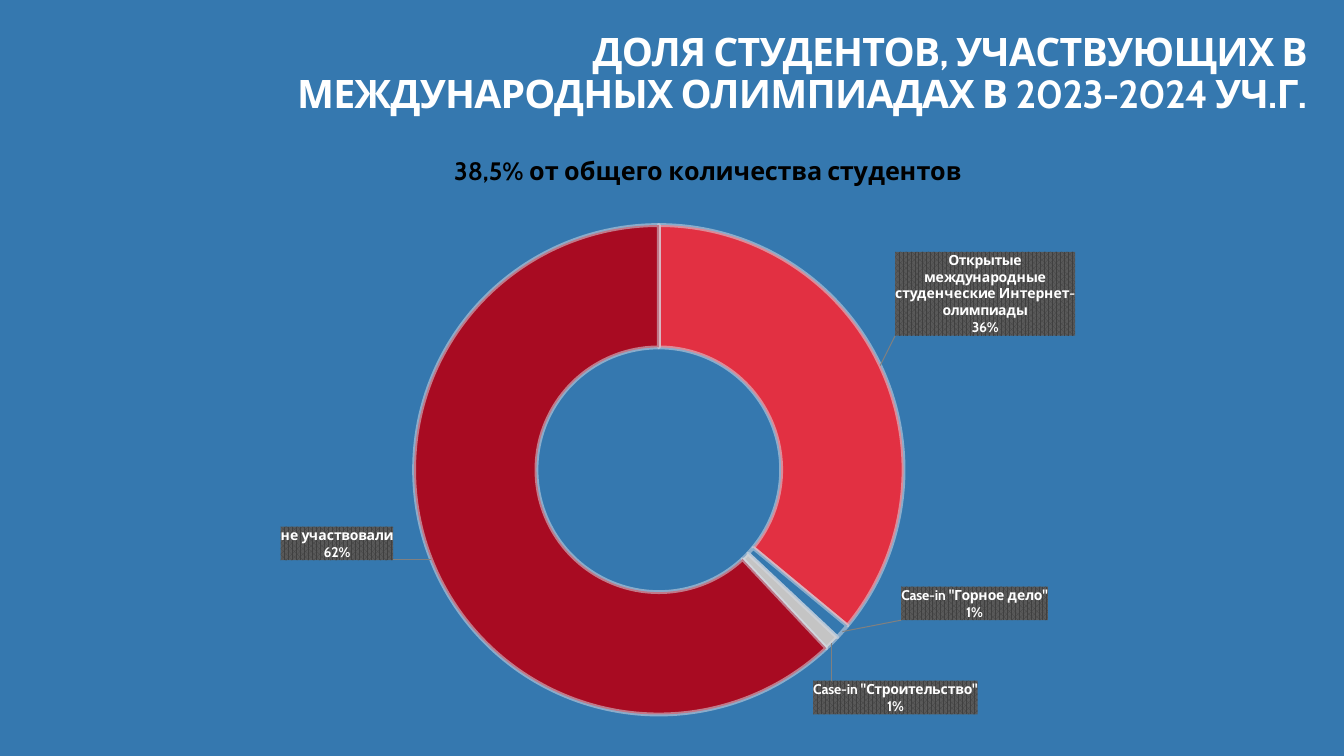
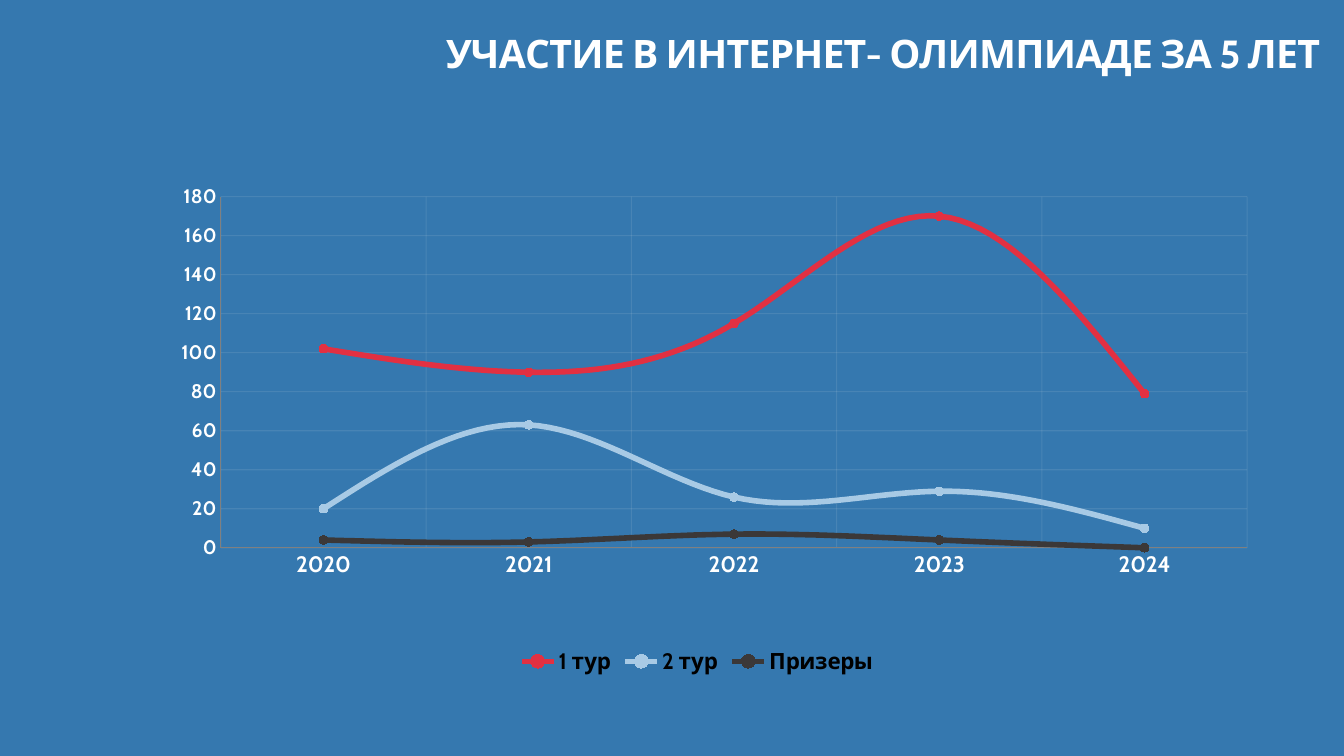
from dataclasses import dataclass

from pptx import Presentation
from pptx import util as u
from pptx.chart.data import CategoryChartData
from pptx.dml.color import RGBColor
from pptx.enum import chart as ch
from pptx.enum import text
from pptx.oxml import parse_xml
from pptx.oxml.ns import nsdecls, qn

EMU_PER_PX = 914400 / 100.8
FONT = "Cabin"
COLORS = {
    "background": "3578AF",
    "white": "FFFFFF",
    "black": "000000",
    "red": "E23042",
    "dark_red": "A80B22",
    "silver": "C4C4C4",
    "ring_edge": "D6DCE5",
    "light_blue": "A8CAE5",
    "charcoal": "3B3838",
    "axis": "808080",
    "grid": "F2F2F2",
    "label_front": "404040",
    "label_back": "595959",
}


@dataclass(frozen=True)
class Box:
    left: int
    top: int
    width: int
    height: int

    def emu(self) -> tuple:
        return tuple(px(v) for v in (self.left, self.top, self.width, self.height))


@dataclass(frozen=True)
class Share:
    """One ring segment; dx and dy move its label, as parts of the chart."""
    name: str
    percent: int
    color: str
    dx: float
    dy: float
    label_size: tuple = ()


@dataclass(frozen=True)
class Trend:
    name: str
    values: tuple
    color: str


SHARES = (
    Share("Открытые международные студенческие Интернет-олимпиады", 36, "red",
          0.18, -0.16, (0.2, 0.14)),
    Share('Case-in "Горное дело"', 1, "background", 0.2, 0.02),
    Share('Case-in "Строительство"', 1, "silver", 0.12, 0.16),
    Share("не участвовали", 62, "dark_red", -0.17, 0.01),
)
YEARS = ("2020", "2021", "2022", "2023", "2024")
TRENDS = (
    Trend("1 тур", (102, 90, 115, 170, 79), "red"),
    Trend("2 тур", (20, 63, 26, 29, 10), "light_blue"),
    Trend("Призеры", (4, 3, 7, 4, 0), "charcoal"),
)


def px(value: float) -> int:
    return round(value * EMU_PER_PX)


def rgb(name: str) -> RGBColor:
    return RGBColor.from_string(COLORS[name])


def set_font(font, size: int, color: str, bold: bool = True) -> None:
    font.name = FONT
    font.size = u.Pt(size)
    font.bold = bold
    font.color.rgb = rgb(color)


def set_line(line, color: str, width: float, opacity: int = 100) -> None:
    line.color.rgb = rgb(color)
    line.width = u.Pt(width)
    if opacity < 100:
        color_element = line._get_or_add_ln().find(".//" + qn("a:srgbClr"))
        color_element.append(
            parse_xml(f'<a:alpha {nsdecls("a")} val="{opacity * 1000}"/>'))


def layout_xml(x: float, y: float, w: float = 0, h: float = 0) -> str:
    size = f'<c:w val="{w}"/><c:h val="{h}"/>' if w else ""
    target = '<c:layoutTarget val="inner"/>' if w else ""
    return (f'<c:layout {nsdecls("c")}><c:manualLayout>{target}'
            f'<c:xMode val="edge"/><c:yMode val="edge"/>'
            f'<c:x val="{x}"/><c:y val="{y}"/>{size}'
            f'</c:manualLayout></c:layout>')


def place_plot(chart, x: float, y: float, w: float, h: float) -> None:
    area = chart._chartSpace.find(".//" + qn("c:plotArea"))
    for layout in area.findall(qn("c:layout")):
        area.remove(layout)
    area.insert(0, parse_xml(layout_xml(x, y, w, h)))


def add_titled_slide(presentation, title: str, box: Box):
    slide = presentation.slides.add_slide(presentation.slide_layouts[5])
    shape = slide.shapes.title
    shape.left, shape.top, shape.width, shape.height = box.emu()
    frame = shape.text_frame
    frame.margin_left = frame.margin_right = 0
    frame.margin_top = frame.margin_bottom = 0
    frame.word_wrap = True
    frame.auto_size = text.MSO_AUTO_SIZE.SHAPE_TO_FIT_TEXT
    frame.vertical_anchor = text.MSO_ANCHOR.BOTTOM
    paragraph = frame.paragraphs[0]
    paragraph.alignment = text.PP_ALIGN.RIGHT
    paragraph.line_spacing = 0.9
    run = paragraph.add_run()
    run.text = title
    set_font(run.font, 28, "white")
    run.font._element.set("spc", "-50")
    return slide


def add_chart(slide, kind, box: Box, data):
    chart = slide.shapes.add_chart(kind, *box.emu(), data).chart
    set_font(chart.font, 10, "white", bold=False)
    return chart


def ring_labels_xml() -> str:
    look = (
        '<c:spPr><a:pattFill prst="pct75">'
        f'<a:fgClr><a:srgbClr val="{COLORS["label_front"]}"/></a:fgClr>'
        f'<a:bgClr><a:srgbClr val="{COLORS["label_back"]}"/></a:bgClr>'
        '</a:pattFill><a:ln><a:noFill/></a:ln></c:spPr>'
        '<c:txPr><a:bodyPr/><a:p><a:pPr><a:defRPr sz="1000" b="1"><a:solidFill>'
        f'<a:srgbClr val="{COLORS["white"]}"/></a:solidFill>'
        f'<a:latin typeface="{FONT}"/></a:defRPr></a:pPr>'
        '<a:endParaRPr lang="ru-RU"/></a:p></c:txPr>'
        '<c:showLegendKey val="0"/><c:showVal val="0"/><c:showCatName val="1"/>'
        '<c:showSerName val="0"/><c:showPercent val="1"/>'
        '<c:showBubbleSize val="0"/><c:separator>\n</c:separator>')
    labels = ""
    for index, share in enumerate(SHARES):
        size = ""
        if share.label_size:
            width, height = share.label_size
            size = (
                '<c:extLst><c:ext uri="{CE6537A1-D6FC-4f65-9D91-7224C49458BB}" '
                'xmlns:c15="http://schemas.microsoft.com/office/drawing/2012/chart">'
                f'<c15:layout><c:manualLayout><c:w val="{width}"/>'
                f'<c:h val="{height}"/></c:manualLayout></c15:layout>'
                '</c:ext></c:extLst>')
        labels += (f'<c:dLbl><c:idx val="{index}"/><c:layout><c:manualLayout>'
                   f'<c:x val="{share.dx}"/><c:y val="{share.dy}"/>'
                   f'</c:manualLayout></c:layout>{look}{size}</c:dLbl>')
    return (f'<c:dLbls {nsdecls("c", "a")}>{labels}{look}'
            '<c:showLeaderLines val="1"/><c:leaderLines><c:spPr><a:ln w="9525">'
            f'<a:solidFill><a:srgbClr val="{COLORS["axis"]}"/></a:solidFill>'
            '</a:ln></c:spPr></c:leaderLines></c:dLbls>')


def build_share_slide(presentation) -> None:
    slide = add_titled_slide(
        presentation,
        "ДОЛЯ СТУДЕНТОВ, УЧАСТВУЮЩИХ В МЕЖДУНАРОДНЫХ ОЛИМПИАДАХ В 2023-2024 УЧ.Г.",
        Box(261, 22, 1046, 95))
    data = CategoryChartData(number_format="General")
    data.categories = [share.name for share in SHARES]
    data.add_series("Series 1", [share.percent for share in SHARES])
    chart = add_chart(slide, ch.XL_CHART_TYPE.DOUGHNUT, Box(245, 118, 890, 612), data)
    chart.has_legend = False
    place_plot(chart, 0.19, 0.17, 0.55, 0.81)

    # Chart heading
    chart.has_title = True
    heading = chart.chart_title.text_frame.paragraphs[0].add_run()
    heading.text = "38,5% от общего количества студентов"
    set_font(heading.font, 18, "black")
    title = chart.chart_title._element
    for layout in title.findall(qn("c:layout")):
        title.remove(layout)
    title.find(qn("c:tx")).addnext(parse_xml(layout_xml(0.23, 0.05)))

    # Ring segments and their labels
    plot = chart.plots[0]
    plot.vary_by_categories = True
    series = plot.series[0]
    for index, share in enumerate(SHARES):
        point = series.points[index].format
        point.fill.solid()
        point.fill.fore_color.rgb = rgb(share.color)
        set_line(point.line, "ring_edge", 2.75, opacity=52)
    labels = series.data_labels._element
    labels.getparent().replace(labels, parse_xml(ring_labels_xml()))


def build_trend_slide(presentation) -> None:
    slide = add_titled_slide(
        presentation, "УЧАСТИЕ В ИНТЕРНЕТ- ОЛИМПИАДЕ ЗА 5 ЛЕТ",
        Box(196, 30, 1124, 47))
    data = CategoryChartData(number_format="General")
    data.categories = YEARS
    for trend in TRENDS:
        data.add_series(trend.name, trend.values)
    chart = add_chart(slide, ch.XL_CHART_TYPE.LINE_MARKERS,
                      Box(126, 167, 1143, 512), data)
    chart.has_title = False
    place_plot(chart, 0.083, 0.058, 0.898, 0.686)

    # Axes and grid
    for axis, size in ((chart.category_axis, 16), (chart.value_axis, 14)):
        axis.major_tick_mark = axis.minor_tick_mark = ch.XL_TICK_MARK.NONE
        axis.has_major_gridlines = True
        set_line(axis.major_gridlines.format.line, "grid", 0.75, opacity=10)
        set_line(axis.format.line, "axis", 0.75)
        set_font(axis.tick_labels.font, size, "white")
    chart.value_axis.minimum_scale = 0
    chart.value_axis.maximum_scale = 180
    chart.value_axis.major_unit = 20

    # Legend
    chart.has_legend = True
    chart.legend.position = ch.XL_LEGEND_POSITION.BOTTOM
    chart.legend.include_in_layout = False
    set_font(chart.legend.font, 16, "black")

    # Curves
    chart.plots[0].vary_by_categories = False
    for series, trend in zip(chart.plots[0].series, TRENDS):
        series.smooth = True
        set_line(series.format.line, trend.color, 4)
        marker = series.marker
        marker.style = ch.XL_MARKER_STYLE.CIRCLE
        marker.size = 6
        marker.format.fill.solid()
        marker.format.fill.fore_color.rgb = rgb(trend.color)
        set_line(marker.format.line, trend.color, 0.75)


def main() -> None:
    presentation = Presentation()
    presentation.slide_width = px(1344)
    presentation.slide_height = px(756)
    background = presentation.slide_master.background.fill
    background.solid()
    background.fore_color.rgb = rgb("background")
    build_share_slide(presentation)
    build_trend_slide(presentation)
    presentation.save("out.pptx")


if __name__ == "__main__":
    main()
